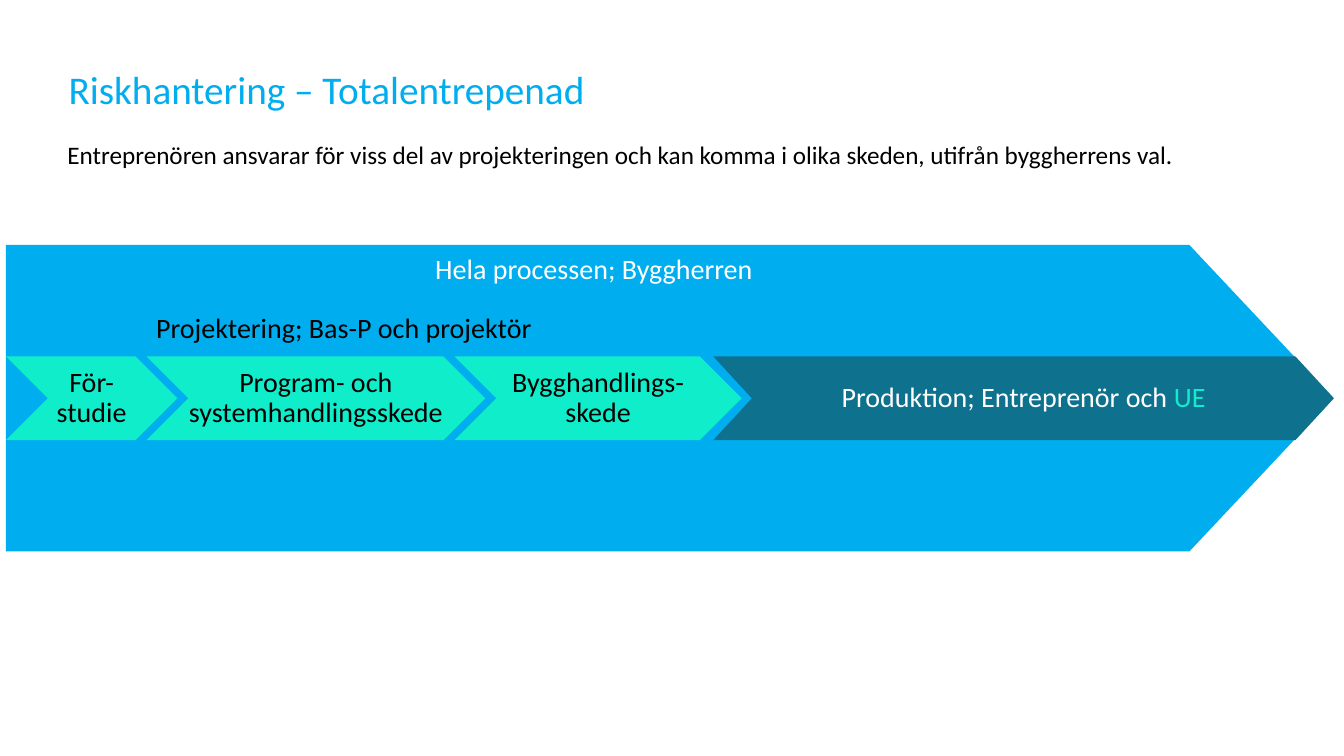
from pptx import Presentation
from pptx import util as u
from pptx.dml.color import RGBColor
from pptx.enum import shapes, text

BLUE = RGBColor(0x00, 0xAE, 0xEF)
MINT = RGBColor(0x10, 0xED, 0xCB)
TEAL = RGBColor(0x0E, 0x71, 0x8E)
BLACK = RGBColor(0, 0, 0)
WHITE = RGBColor(255, 255, 255)


def write(shape, runs, size, frame_format, paragraph_format):
    """Fill a shape with one paragraph made of (words, colour) runs."""
    frame = shape.text_frame
    for name, value in frame_format.items():
        setattr(frame, name, value)
    paragraph = frame.paragraphs[0]
    for name, value in paragraph_format.items():
        setattr(paragraph, name, value)
    for words, colour in runs:
        run = paragraph.add_run()
        run.text = words
        run.font.color.rgb = colour
        for name, value in {"name": "Calibri", "size": u.Pt(size)}.items():
            setattr(run.font, name, value)


def add_arrow(kind, left, top, width, height, point, colour):
    """Add a flat arrow; point is the tip length as a share of the height."""
    shape = slide.shapes.add_shape(
        kind, u.Pt(left), u.Pt(top), u.Pt(width), u.Pt(height))
    shape.adjustments[0] = point
    shape.fill.solid()
    shape.fill.fore_color.rgb = colour
    shape.line.fill.background()
    shape.shadow.inherit = False
    return shape


presentation = Presentation()
presentation.slide_width = u.Pt(960)
presentation.slide_height = u.Pt(540)
slide = presentation.slides.add_slide(presentation.slide_layouts[5])

# Title
title = slide.shapes.title
for name, value in {"left": 49, "top": 43.9, "width": 805.7, "height": 43.2}.items():
    setattr(title, name, u.Pt(value))
write(title, [("Riskhantering – Totalentrepenad", BLUE)], 28,
      {"margin_left": 0, "word_wrap": True, "auto_size": text.MSO_AUTO_SIZE.NONE,
       "vertical_anchor": text.MSO_ANCHOR.MIDDLE},
      {"alignment": text.PP_ALIGN.LEFT, "line_spacing": 0.9})

# Arrow for the whole process
add_arrow(shapes.MSO_SHAPE.PENTAGON, 4.3, 175, 948.2, 218.9, 0.47, BLUE)

# Phases: left, width, tip, fill, runs
phases = [
    (4.3, 122.4, 0.5, MINT, [("För-studie", BLACK)]),
    (104.6, 242, 0.5, MINT, [("Program- och systemhandlingsskede", BLACK)]),
    (324.6, 205.2, 0.5, MINT, [("Bygghandlings-skede", BLACK)]),
    (509.5, 443.3, 0.46, TEAL,
     [("Produktion; Entreprenör och ", WHITE), ("UE", MINT)]),
]
for left, width, point, colour, runs in phases:
    phase = add_arrow(shapes.MSO_SHAPE.CHEVRON, left, 254.6, width, 59.8, point, colour)
    write(phase, runs, 20,
          {"margin_left": 0, "margin_right": 0, "margin_top": u.Pt(1.4),
           "margin_bottom": u.Pt(1.4), "word_wrap": True,
           "vertical_anchor": text.MSO_ANCHOR.MIDDLE},
          {"alignment": text.PP_ALIGN.CENTER, "line_spacing": 0.9})

# Labels and introduction: left, top, width, height, left margin, size, colour, words
labels = [
    (104.4, 218.2, 370, 31.5, 7.2, 20, BLACK, "Projektering; Bas-P och projektör"),
    (303.8, 176.4, 290, 31.5, 7.2, 20, WHITE, "Hela processen; Byggherren"),
    (48.2, 95.8, 809.3, 29, 0, 18, BLACK,
     "Entreprenören ansvarar för viss del av projekteringen och kan komma "
     "i olika skeden, utifrån byggherrens val."),
]
for left, top, width, height, margin, size, colour, words in labels:
    label = slide.shapes.add_textbox(u.Pt(left), u.Pt(top), u.Pt(width), u.Pt(height))
    write(label, [(words, colour)], size,
          {"margin_left": u.Pt(margin), "word_wrap": True},
          {"alignment": text.PP_ALIGN.LEFT})

presentation.save("out.pptx")
